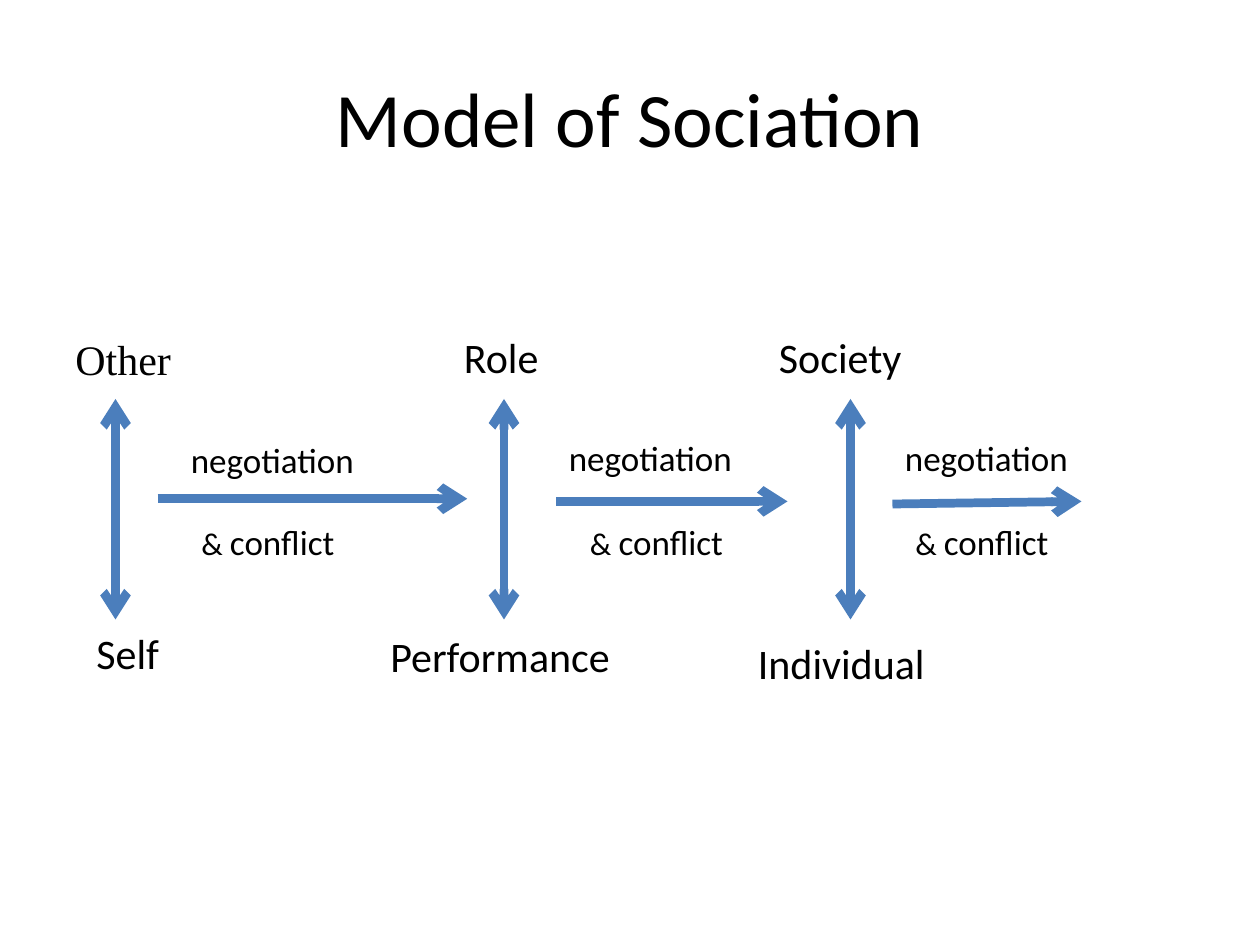
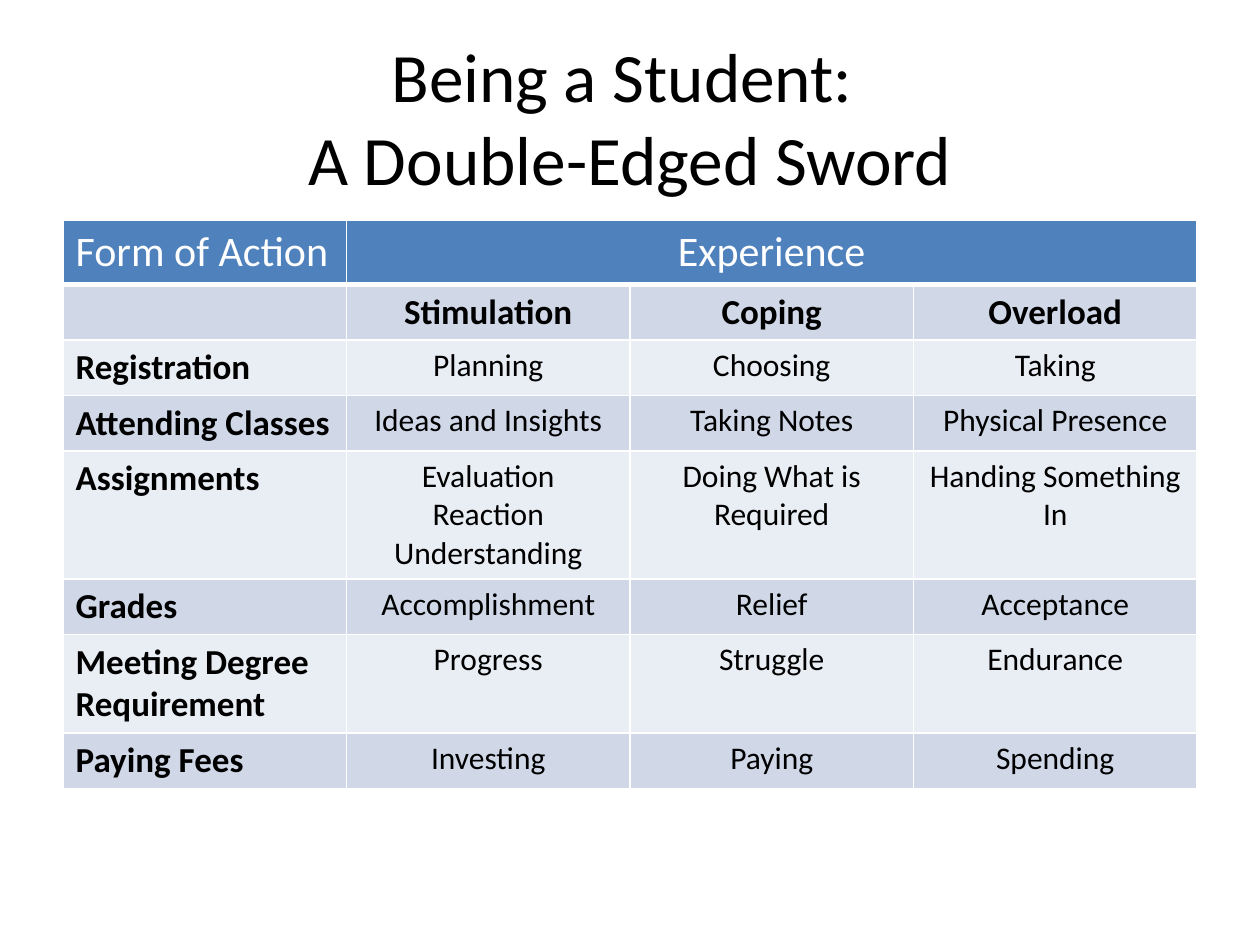
from dataclasses import dataclass

from lxml import etree
from pptx import Presentation
from pptx.dml.color import RGBColor
from pptx.enum.shapes import MSO_CONNECTOR
from pptx.enum.text import MSO_ANCHOR, MSO_AUTO_SIZE, PP_ALIGN
from pptx.oxml.ns import qn
from pptx.util import Inches, Pt

STRAIGHT = MSO_CONNECTOR.STRAIGHT
LEFT, CENTER = PP_ALIGN.LEFT, PP_ALIGN.CENTER
MIDDLE = MSO_ANCHOR.MIDDLE
NO_AUTOFIT = MSO_AUTO_SIZE.NONE
TITLE_ONLY = 5

COLORS = {"text": "000000", "white": "FFFFFF", "arrow": "4B7EBC",
          "header": "4F81BD", "dark_band": "D0D8E8", "light_band": "E9EDF4"}
FONT = "Calibri"
SERIF_FONT = "Times New Roman"

# The slide is a grid of 120 columns and 90 rows
COLUMNS, ROWS = 120, 90
SLIDE_WIDTH, SLIDE_HEIGHT = Inches(10), Inches(7.5)
MARGIN = 6
CONTENT_WIDTH = COLUMNS - 2 * MARGIN


@dataclass(frozen=True)
class Label:
    text: str
    column: float
    row: float
    width: float
    font: str = FONT


@dataclass(frozen=True)
class Arrow:
    start: tuple[float, float]
    end: tuple[float, float]
    double: bool = False


@dataclass(frozen=True)
class Flow:
    """A horizontal arrow with a label above and a label below."""
    arrow: Arrow
    above: Label
    below: Label


# Slide 1: the three pairs and the flows between them
PAIR_COLUMNS = (11, 48, 81)
PAIR_TOP, PAIR_BOTTOM = 38, 59
PAIR_LABELS = (
    Label("Other", 6, 31.2, 12, SERIF_FONT), Label("Self", 8, 59.2, 10),
    Label("Role", 43, 31, 10), Label("Performance", 36, 59.5, 24.5),
    Label("Society", 73, 31, 16), Label("Individual", 71, 60.1, 20),
)
ABOVE, BELOW = "negotiation", "conflict"
FLOWS = (
    Flow(Arrow((15, 47.5), (44.5, 47.5)),
         Label(ABOVE, 17, 41.2, 18), Label(BELOW, 18, 49, 17)),
    Flow(Arrow((53, 47.75), (75, 47.75)),
         Label(ABOVE, 53, 41, 19), Label(BELOW, 55, 49, 16)),
    Flow(Arrow((85, 48), (103, 47.75)),
         Label(ABOVE, 85, 41, 18), Label(BELOW, 86, 49, 17)),
)

# Slide 2: the table
TABLE_TOP, TABLE_ROW = 21, 4.93
TABLE_ROWS = (
    ("Form of Action", "Experience", "", ""),
    ("", "Stimulation", "Coping", "Overload"),
    ("Registration", "Planning", "Choosing", "Taking"),
    ("Attending Classes", "Ideas and Insights", "Taking Notes", "Physical Presence"),
    ("Assignments", "Evaluation\nReaction\nUnderstanding",
     "Doing What is Required", "Handing Something In"),
    ("Grades", "Accomplishment", "Relief", "Acceptance"),
    ("Meeting Degree Requirement", "Progress", "Struggle", "Endurance"),
    ("Paying Fees", "Investing", "Paying", "Spending"),
)


def across(columns: float) -> int:
    return round(SLIDE_WIDTH * columns / COLUMNS)


def down(rows: float) -> int:
    return round(SLIDE_HEIGHT * rows / ROWS)


def color(name: str) -> RGBColor:
    return RGBColor.from_string(COLORS[name])


def format_run(run, size: float, font: str = FONT, color_name: str = "text",
               bold: bool = False) -> None:
    run.font.size = Pt(size)
    run.font.name = font
    run.font.bold = bold
    run.font.color.rgb = color(color_name)


def add_titled_slide(presentation, title: str, size: float):
    slide = presentation.slides.add_slide(presentation.slide_layouts[TITLE_ONLY])
    shape = slide.shapes.title
    shape.left, shape.top = across(MARGIN), down(3.6)
    shape.width, shape.height = across(CONTENT_WIDTH), down(15)
    text_frame = shape.text_frame
    text_frame.text = title
    text_frame.auto_size = NO_AUTOFIT
    text_frame.vertical_anchor = MIDDLE
    paragraph = text_frame.paragraphs[0]
    paragraph.alignment = CENTER
    for run in paragraph.runs:
        format_run(run, size)
    # A line break keeps the size of the text around it
    for line_break in paragraph._p.findall(qn("a:br")):
        etree.SubElement(line_break, qn("a:rPr"), sz=str(round(size * 100)))
    return slide


def add_label(slide, label: Label, size: float, prefix: str = "") -> None:
    box = slide.shapes.add_textbox(across(label.column), down(label.row),
                                   across(label.width), down(size / 4))
    text_frame = box.text_frame
    text_frame.word_wrap = True
    paragraph = text_frame.paragraphs[0]
    if prefix:
        paragraph.text = prefix
        format_run(paragraph.runs[0], 18)
    run = paragraph.add_run()
    run.text = label.text
    format_run(run, size, label.font)


def add_arrow(slide, arrow: Arrow) -> None:
    (start_column, start_row), (end_column, end_row) = arrow.start, arrow.end
    connector = slide.shapes.add_connector(
        STRAIGHT, across(start_column), down(start_row),
        across(end_column), down(end_row))
    connector.line.color.rgb = color("arrow")
    connector.line.width = Pt(5)
    line = connector.line._get_or_add_ln()
    for end in ("headEnd", "tailEnd") if arrow.double else ("tailEnd",):
        etree.SubElement(line, qn(f"a:{end}"), type="arrow")
    etree.SubElement(connector._element.spPr, qn("a:effectLst"))


def set_borders(cell, widths: dict[str, float]) -> None:
    properties = cell._tc.get_or_add_tcPr()
    for side, width in widths.items():
        line = etree.SubElement(properties, qn(f"a:ln{side}"), w=str(Pt(width)))
        fill = etree.SubElement(line, qn("a:solidFill"))
        etree.SubElement(fill, qn("a:srgbClr"), val=COLORS["white"])


def format_cell(cell, text: str, row: int, column: int) -> None:
    header = row == 0
    set_borders(cell, {"L": 1, "R": 1, "T": 3 if row == 1 else 1,
                       "B": 3 if header else 1})
    band = "dark_band" if row % 2 else "light_band"
    cell.fill.solid()
    cell.fill.fore_color.rgb = color("header" if header else band)
    if not text:
        return
    bold = not header and (row == 1 or column == 0)
    size = 24 if header else 20 if bold else 18
    cell.text_frame.text = text
    for paragraph in cell.text_frame.paragraphs:
        paragraph.alignment = CENTER if column else LEFT
        format_run(paragraph.runs[0], size, bold=bold,
                   color_name="white" if header else "text")


def build_sociation_slide(presentation) -> None:
    slide = add_titled_slide(presentation, "Model of Sociation", 44)
    for column in PAIR_COLUMNS:
        add_arrow(slide, Arrow((column, PAIR_TOP), (column, PAIR_BOTTOM), double=True))
    for label in PAIR_LABELS:
        add_label(slide, label, 24)
    for flow in FLOWS:
        add_arrow(slide, flow.arrow)
        add_label(slide, flow.above, 20)
        add_label(slide, flow.below, 20, prefix="& ")


def build_student_slide(presentation) -> None:
    slide = add_titled_slide(
        presentation, "Being a Student: \vA Double-Edged Sword", 39.6)
    row_count, column_count = len(TABLE_ROWS), len(TABLE_ROWS[0])
    table = slide.shapes.add_table(
        row_count, column_count, across(MARGIN), down(TABLE_TOP),
        across(CONTENT_WIDTH), down(TABLE_ROW * row_count)).table
    table.cell(0, 1).merge(table.cell(0, column_count - 1))
    for row, texts in enumerate(TABLE_ROWS):
        for column, text in enumerate(texts):
            format_cell(table.cell(row, column), text, row, column)


def main() -> None:
    presentation = Presentation()
    presentation.slide_width, presentation.slide_height = SLIDE_WIDTH, SLIDE_HEIGHT
    build_sociation_slide(presentation)
    build_student_slide(presentation)
    presentation.save("out.pptx")


if __name__ == "__main__":
    main()
